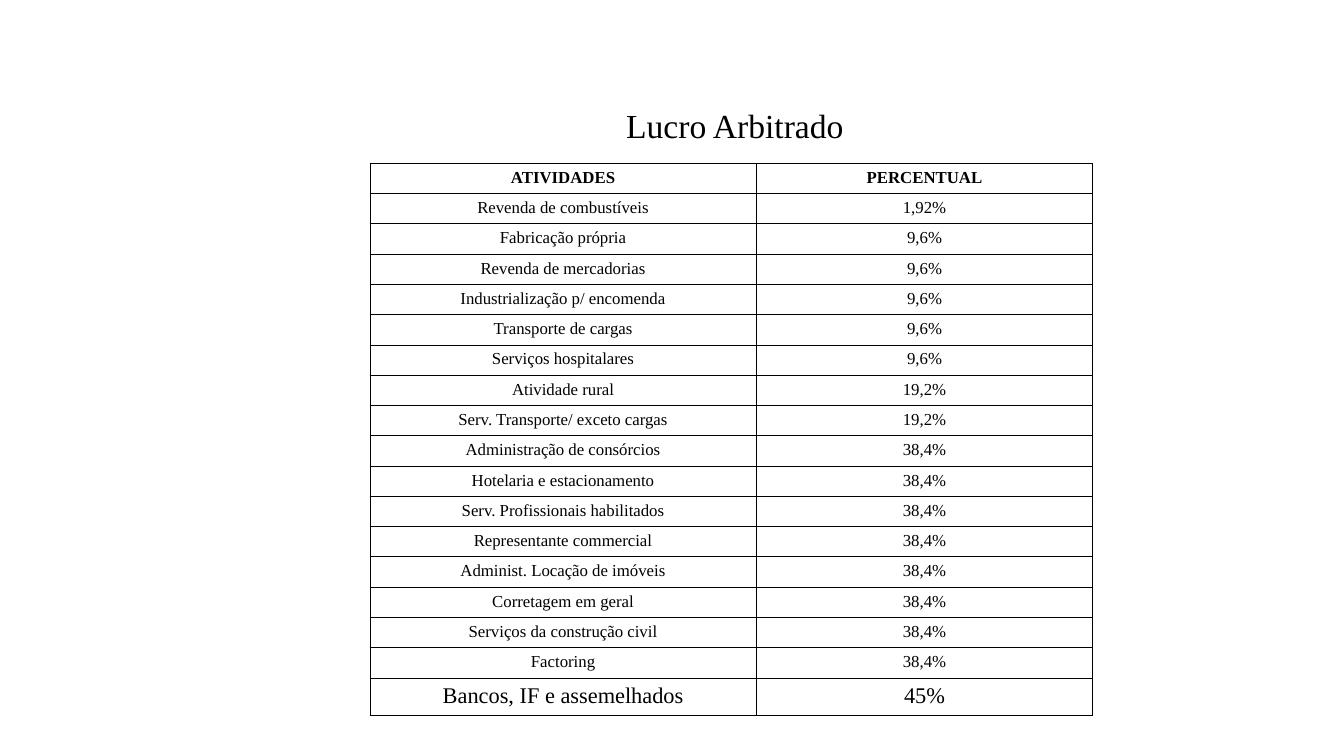
from lxml.etree import SubElement
from pptx import Presentation
from pptx.dml.color import RGBColor
from pptx.enum.text import MSO_ANCHOR, MSO_AUTO_SIZE, PP_ALIGN
from pptx.oxml.ns import qn
from pptx.util import Inches, Pt

COLORS = {"ink": "000000", "page": "FFFFFF"}
FONT = "Times New Roman"
BORDER_WIDTH = Pt(0.75)

COLUMN_WIDTHS = [3.83, 3.34]
ROW_HEIGHT, LAST_ROW_HEIGHT = 0.3, 0.37

ROWS = [
    ("ATIVIDADES", "PERCENTUAL"),
    ("Revenda de combustíveis", "1,92%"),
    ("Fabricação própria", "9,6%"),
    ("Revenda de mercadorias", "9,6%"),
    ("Industrialização p/ encomenda", "9,6%"),
    ("Transporte de cargas", "9,6%"),
    ("Serviços hospitalares", "9,6%"),
    ("Atividade rural", "19,2%"),
    ("Serv. Transporte/ exceto cargas", "19,2%"),
    ("Administração de consórcios", "38,4%"),
    ("Hotelaria e estacionamento", "38,4%"),
    ("Serv. Profissionais habilitados", "38,4%"),
    ("Representante commercial", "38,4%"),
    ("Administ. Locação de imóveis", "38,4%"),
    ("Corretagem em geral", "38,4%"),
    ("Serviços da construção civil", "38,4%"),
    ("Factoring", "38,4%"),
    ("Bancos, IF e assemelhados", "45%"),
]


def set_values(target, values):
    for name, value in values.items():
        setattr(target, name, value)


def write_text(frame, text, size, align, bold=False):
    para = frame.paragraphs[0]
    para.alignment = align
    span = para.add_run()
    span.text = text
    set_values(span.font, {"name": FONT, "size": Pt(size), "bold": bold})
    span.font.color.rgb = RGBColor.from_string(COLORS["ink"])


def add_borders(cell):
    properties = cell._tc.get_or_add_tcPr()
    for side in ("a:lnL", "a:lnR", "a:lnT", "a:lnB"):
        line = SubElement(properties, qn(side), w=str(BORDER_WIDTH))
        fill = SubElement(line, qn("a:solidFill"))
        SubElement(fill, qn("a:srgbClr"), val=COLORS["ink"])


def add_title(page, text):
    title = page.shapes.title
    set_values(title, {"left": Inches(6.11), "top": Inches(0.99),
                       "width": Inches(2.38), "height": Inches(0.5)})
    set_values(title.text_frame, {"word_wrap": False,
                                  "auto_size": MSO_AUTO_SIZE.SHAPE_TO_FIT_TEXT,
                                  "vertical_anchor": MSO_ANCHOR.TOP})
    write_text(title.text_frame, text, 24, PP_ALIGN.LEFT)


def add_rate_table(page, rows):
    last = len(rows) - 1
    height = last * ROW_HEIGHT + LAST_ROW_HEIGHT
    table = page.shapes.add_table(
        len(rows), len(COLUMN_WIDTHS), Inches(3.67), Inches(1.62),
        Inches(sum(COLUMN_WIDTHS)), Inches(height)).table
    set_values(table, {"first_row": False, "horz_banding": False})
    for column, width in zip(table.columns, COLUMN_WIDTHS):
        column.width = Inches(width)

    for index, values in enumerate(rows):
        # The closing row is taller and set in larger type
        row_height, size = (LAST_ROW_HEIGHT, 16) if index == last else (ROW_HEIGHT, 12)
        table.rows[index].height = Inches(row_height)
        for cell, text in zip(table.rows[index].cells, values):
            set_values(cell, {"margin_left": Inches(0.1), "margin_right": Inches(0.1),
                              "margin_top": Inches(0.05), "margin_bottom": Inches(0.05)})
            add_borders(cell)
            cell.fill.background()
            write_text(cell.text_frame, text, size, PP_ALIGN.CENTER, bold=index == 0)


def main():
    deck = Presentation()
    set_values(deck, {"slide_width": Inches(13.33), "slide_height": Inches(7.5)})
    page = deck.slides.add_slide(deck.slide_layouts.get_by_name("Title Only"))
    page.background.fill.solid()
    page.background.fill.fore_color.rgb = RGBColor.from_string(COLORS["page"])

    # Heading
    add_title(page, "Lucro Arbitrado")
    # Activities and their percentages
    add_rate_table(page, ROWS)

    deck.save("out.pptx")


if __name__ == "__main__":
    main()
